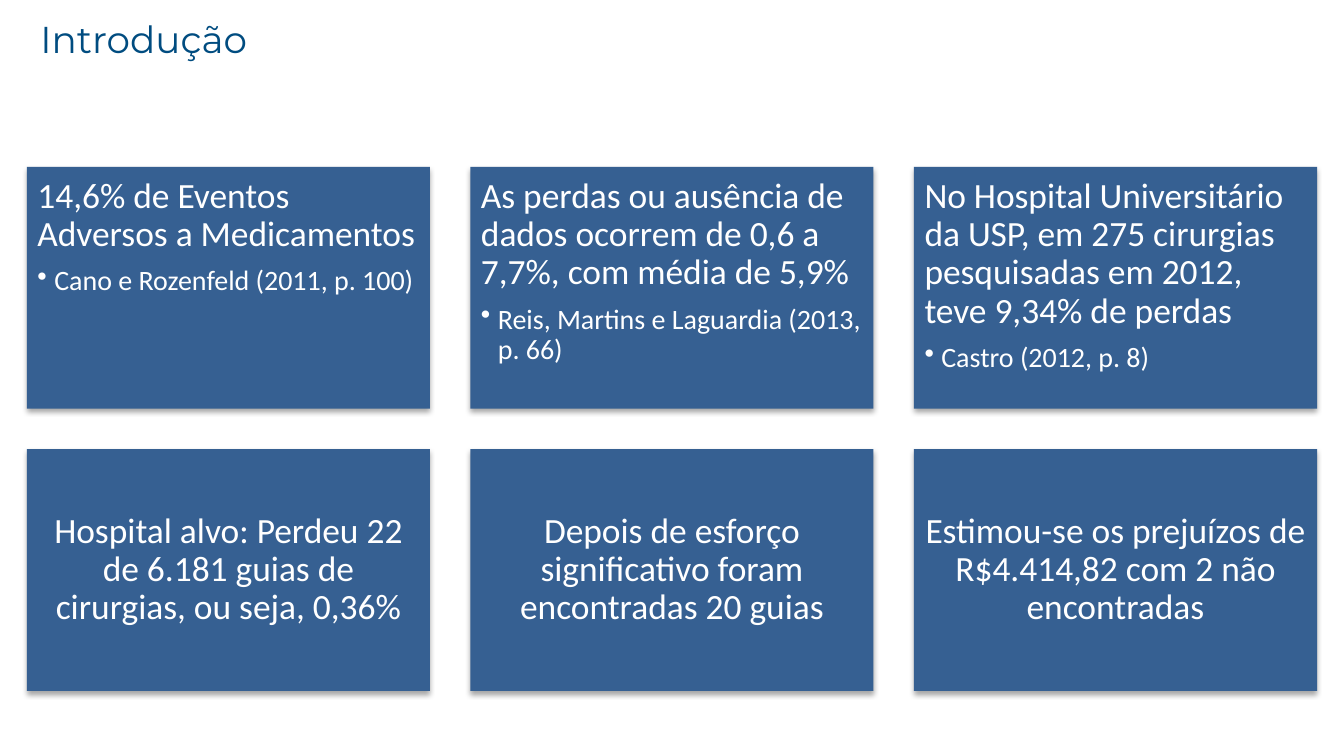
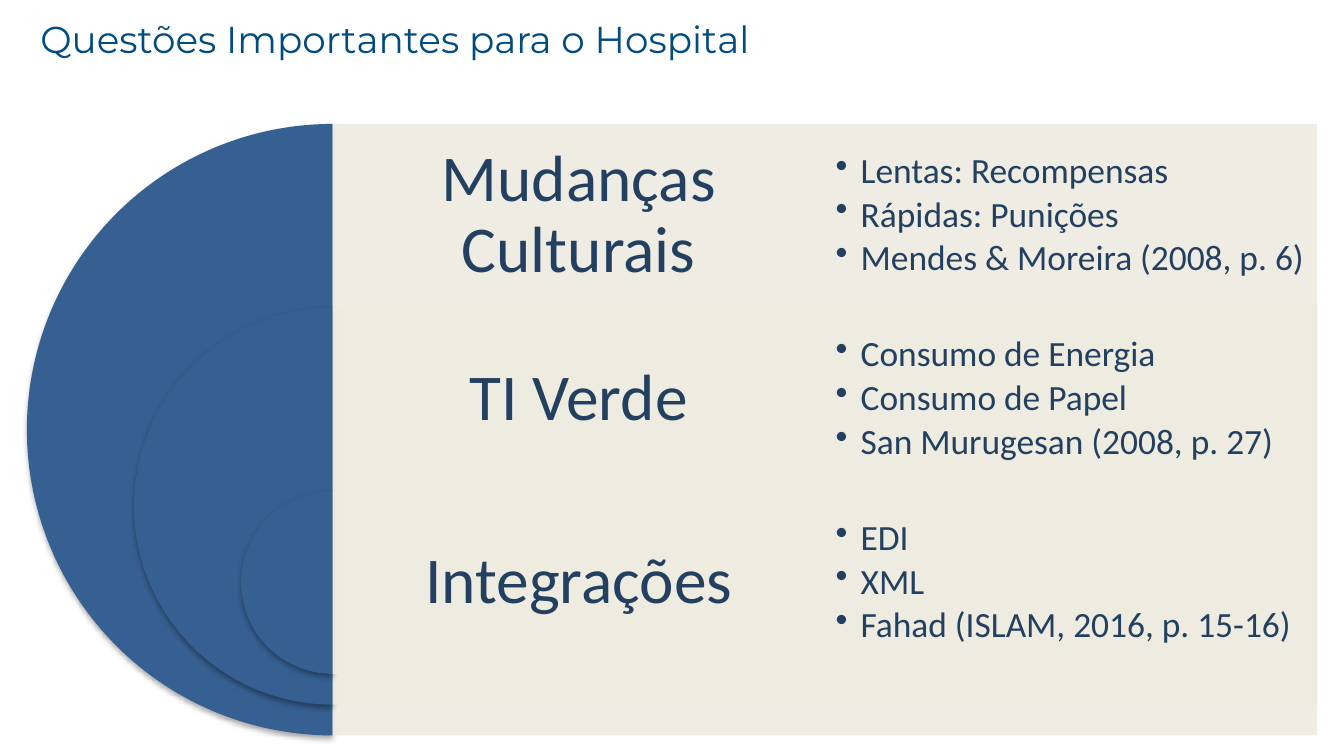
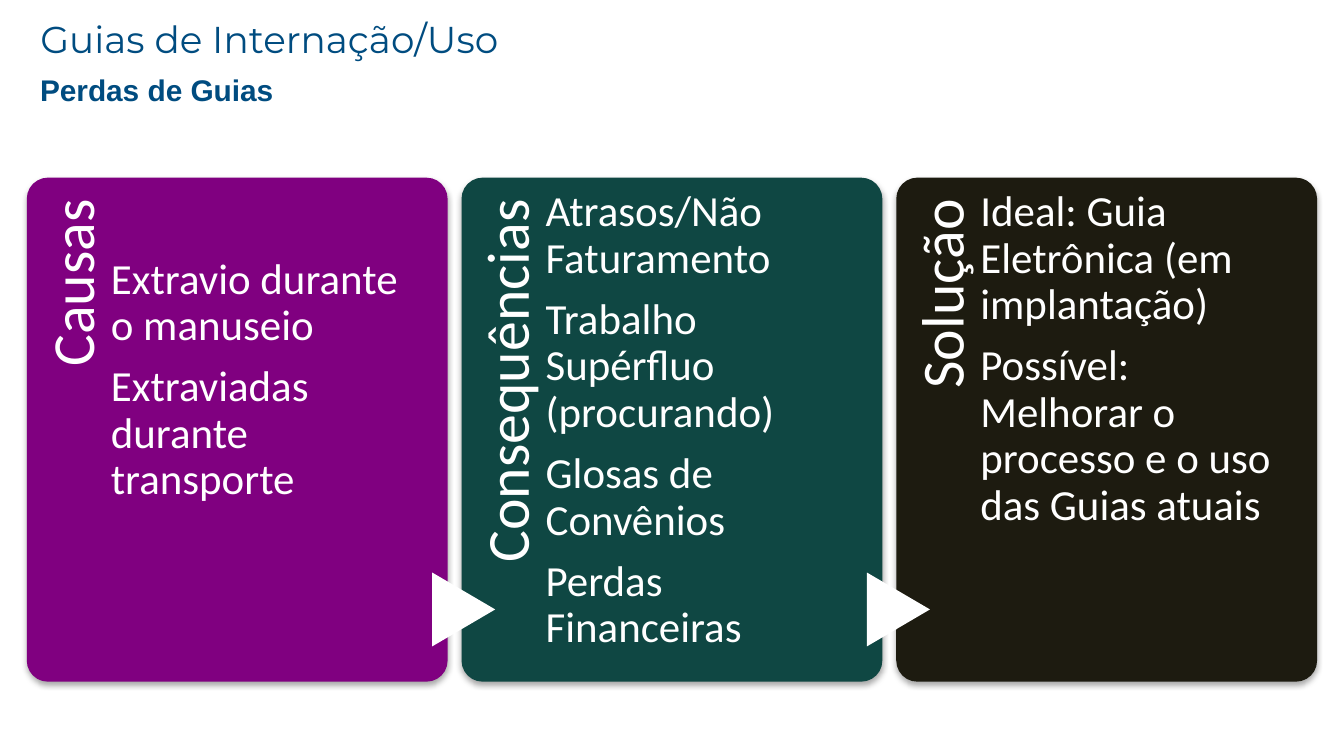
from dataclasses import dataclass

from lxml.etree import SubElement
from pptx import Presentation
from pptx.dml.color import RGBColor
from pptx.enum.shapes import MSO_SHAPE as Preset
from pptx.enum.text import MSO_ANCHOR as Anchor, MSO_AUTO_SIZE as AutoSize, PP_ALIGN as Align
from pptx.oxml.ns import qn
from pptx.util import Pt

# Shared colours and fonts
TITLE_BLUE = RGBColor(0x00, 0x4C, 0x80)
BOX_BLUE = RGBColor(0x36, 0x60, 0x92)
DARK_BLUE = RGBColor(0x24, 0x40, 0x61)
CREAM = RGBColor(0xEE, 0xEC, 0xE1)
PURPLE = RGBColor(0x80, 0x00, 0x80)
TEAL = RGBColor(0x0F, 0x47, 0x43)
BLACK_BROWN = RGBColor(0x1D, 0x1B, 0x10)
WHITE = RGBColor(0xFF, 0xFF, 0xFF)
BODY_FONT = "Calibri"
TITLE_FONT = "Montserrat"
SUBTITLE_FONT = "Arial"

# Shared layout, in points
MARGIN = 14.4
CONTENT_WIDTH = 691.2
HEADER_WIDTH = 595.4


@dataclass(frozen=True)
class Box:
    left: float
    top: float
    width: float
    height: float

    def lengths(self) -> tuple:
        return Pt(self.left), Pt(self.top), Pt(self.width), Pt(self.height)


@dataclass(frozen=True)
class Style:
    size: float
    color: RGBColor = WHITE
    font: str = BODY_FONT
    bold: bool = False
    align: Align = Align.LEFT
    line_spacing: float = 0.9
    space_after: float = 0
    bullet_indent: float = 0


@dataclass(frozen=True)
class Fact:
    text: str
    citation: str = ""


@dataclass(frozen=True)
class Topic:
    name: str
    points: tuple[str, ...]


@dataclass(frozen=True)
class Card:
    label: str
    color: RGBColor
    points: tuple[str, ...]
    text_offset: float = 0


TITLE = Style(20, TITLE_BLUE, TITLE_FONT, line_spacing=1)
SUBTITLE = Style(16, TITLE_BLUE, SUBTITLE_FONT, bold=True, line_spacing=1)
FACT = Style(19, space_after=6.65)
CENTERED_FACT = Style(19, align=Align.CENTER, space_after=6.65)
CITATION = Style(15, space_after=2.25, bullet_indent=9)
TOPIC_NAME = Style(35, DARK_BLUE, align=Align.CENTER)
TOPIC_POINT = Style(19, DARK_BLUE, space_after=2.85, bullet_indent=13.5)
CARD_LABEL = Style(32, align=Align.RIGHT)
CARD_POINT = Style(23, space_after=8.05)

FACTS = (
    Fact("14,6% de Eventos Adversos a Medicamentos", "Cano e Rozenfeld (2011, p. 100)"),
    Fact("As perdas ou ausência de dados ocorrem de 0,6 a 7,7%, com média de 5,9%",
         "Reis, Martins e Laguardia (2013, p. 66)"),
    Fact("No Hospital Universitário da USP, em 275 cirurgias pesquisadas em 2012, "
         "teve 9,34% de perdas", "Castro (2012, p. 8)"),
    Fact("Hospital alvo: Perdeu 22 de 6.181 guias de cirurgias, ou seja, 0,36%"),
    Fact("Depois de esforço significativo foram encontradas 20 guias"),
    Fact("Estimou-se os prejuízos de R$4.414,82 com 2 não encontradas"),
)
TOPICS = (
    Topic("Mudanças Culturais",
          ("Lentas: Recompensas", "Rápidas: Punições", "Mendes & Moreira (2008, p. 6)")),
    Topic("TI Verde",
          ("Consumo de Energia", "Consumo de Papel", "San Murugesan (2008, p. 27)")),
    Topic("Integrações", ("EDI", "XML", "Fahad (ISLAM, 2016, p. 15-16)")),
)
CARDS = (
    Card("Causas", PURPLE,
         ("Extravio durante o manuseio", "Extraviadas durante transporte"), text_offset=36),
    Card("Consequências", TEAL,
         ("Atrasos/Não Faturamento", "Trabalho Supérfluo (procurando)",
          "Glosas de Convênios", "Perdas Financeiras")),
    Card("Solução", BLACK_BROWN,
         ("Ideal: Guia Eletrônica (em implantação)",
          "Possível: Melhorar o processo e o uso das Guias atuais")),
)


# Drawing helpers
def write(shape, lines: list[tuple[str, Style]], anchor=Anchor.TOP,
          insets: tuple = (7.2, 3.6, 7.2, 3.6)) -> None:
    frame = shape.text_frame
    frame.word_wrap = True
    frame.auto_size = AutoSize.NONE
    frame.vertical_anchor = anchor
    (frame.margin_left, frame.margin_top,
     frame.margin_right, frame.margin_bottom) = map(Pt, insets)
    for index, (text, style) in enumerate(lines):
        paragraph = frame.add_paragraph() if index else frame.paragraphs[0]
        if style.bullet_indent:
            paragraph.level = 1
            properties = paragraph._p.get_or_add_pPr()
            properties.set("marL", str(Pt(style.bullet_indent)))
            properties.set("indent", str(Pt(-style.bullet_indent)))
            SubElement(properties, qn("a:buChar")).set("char", "•")
        paragraph.alignment = style.align
        paragraph.line_spacing = style.line_spacing
        paragraph.space_before = Pt(0)
        paragraph.space_after = Pt(style.space_after)
        run = paragraph.add_run()
        run.text = text
        run.font.name = style.font
        run.font.size = Pt(style.size)
        run.font.bold = style.bold
        run.font.color.rgb = style.color


def add_text(slide, box: Box, lines: list[tuple[str, Style]], **options):
    shape = slide.shapes.add_textbox(*box.lengths())
    write(shape, lines, **options)
    return shape


def add_filled(slide, preset: Preset, box: Box, color: RGBColor, shadow: bool = False):
    shape = slide.shapes.add_shape(preset, *box.lengths())
    shape.fill.solid()
    shape.fill.fore_color.rgb = color
    shape.line.fill.background()
    shape.shadow.inherit = False
    if shadow:
        effects = shape._element.spPr.find(qn("a:effectLst"))
        outer = SubElement(effects, qn("a:outerShdw"), blurRad=str(Pt(3.1)),
                           dist=str(Pt(1.8)), dir="5400000", rotWithShape="0")
        black = SubElement(outer, qn("a:srgbClr"), val="000000")
        SubElement(black, qn("a:alpha"), val="35000")
    return shape


def add_titled_slide(presentation, title: str):
    slide = presentation.slides.add_slide(presentation.slide_layouts[5])
    placeholder = slide.shapes.title
    (placeholder.left, placeholder.top,
     placeholder.width, placeholder.height) = Box(MARGIN, 8, HEADER_WIDTH, 25).lengths()
    write(placeholder, [(title, TITLE)], anchor=Anchor.MIDDLE)
    return slide


# Slides
def build_introduction(presentation) -> None:
    slide = add_titled_slide(presentation, "Introdução")
    columns, gap, height = 3, 21.6, 129.6
    width = (CONTENT_WIDTH - gap * (columns - 1)) / columns
    for index, fact in enumerate(FACTS):
        row, column = divmod(index, columns)
        box = Box(MARGIN + column * (width + gap), 89.4 + row * (height + gap), width, height)
        shape = add_filled(slide, Preset.RECTANGLE, box, BOX_BLUE, shadow=True)
        if fact.citation:
            lines, anchor = [(fact.text, FACT), (fact.citation, CITATION)], Anchor.TOP
        else:
            lines, anchor = [(fact.text, CENTERED_FACT)], Anchor.MIDDLE
        write(shape, lines, anchor=anchor, insets=(5.7,) * 4)


def build_questions(presentation) -> None:
    slide = add_titled_slide(presentation, "Questões Importantes para o Hospital")
    top, row_height, largest, shrink = 66.4, 98.3, 327.6, 114.8
    center = MARGIN + largest / 2
    panel_width = MARGIN + CONTENT_WIDTH - center
    column_width = panel_width / 2
    for index, topic in enumerate(TOPICS):
        row_top = top + index * row_height
        diameter = largest - index * shrink
        # Half disc and its translucent panel
        half_disc = add_filled(slide, Preset.PIE,
                               Box(center - diameter / 2, row_top, diameter, diameter),
                               BOX_BLUE, shadow=True)
        half_disc.adjustments[0] = 54
        half_disc.adjustments[1] = 162
        panel = add_filled(slide, Preset.RECTANGLE,
                           Box(center, row_top, panel_width, diameter), CREAM)
        panel_color = panel._element.spPr.find(qn("a:solidFill"))[0]
        SubElement(panel_color, qn("a:alpha"), val="90000")
        # Topic name and its points
        add_text(slide, Box(center, row_top, column_width, row_height),
                 [(topic.name, TOPIC_NAME)], anchor=Anchor.MIDDLE, insets=(10.8,) * 4)
        add_text(slide, Box(center + column_width, row_top, column_width, row_height),
                 [(point, TOPIC_POINT) for point in topic.points],
                 anchor=Anchor.MIDDLE, insets=(5.7,) * 4)


def build_losses(presentation) -> None:
    slide = add_titled_slide(presentation, "Guias de Internação/Uso")
    add_text(slide, Box(MARGIN, 38.2, HEADER_WIDTH, 19.4),
             [("Perdas de Guias", SUBTITLE)], anchor=Anchor.MIDDLE)
    top, width, height = 95.2, 225.4, 270
    pitch = (CONTENT_WIDTH - width) / (len(CARDS) - 1)
    for index, card in enumerate(CARDS):
        left = MARGIN + index * pitch
        panel = add_filled(slide, Preset.ROUNDED_RECTANGLE, Box(left, top, width, height),
                           card.color, shadow=True)
        panel.adjustments[0] = 0.05
        label = add_text(slide, Box(left - 88.4, 183.6, 221.8, 45.4),
                         [(card.label, CARD_LABEL)], insets=(0, 8.6, 11.4, 0))
        label.rotation = 270
        # Arrow from the card before
        if index:
            arrow = add_filled(slide, Preset.FLOWCHART_EXTRACT,
                               Box(left - 18.7, 309.6, 39.6, 33.8), WHITE)
            arrow.rotation = 90
        add_text(slide, Box(left + 45, top, 168, height),
                 [(point, CARD_POINT) for point in card.points],
                 insets=(0, 6.5 + card.text_offset, 0, 0))


def main() -> None:
    presentation = Presentation()
    presentation.slide_width = Pt(720)
    presentation.slide_height = Pt(405)
    build_introduction(presentation)
    build_questions(presentation)
    build_losses(presentation)
    presentation.save("out.pptx")


if __name__ == "__main__":
    main()
